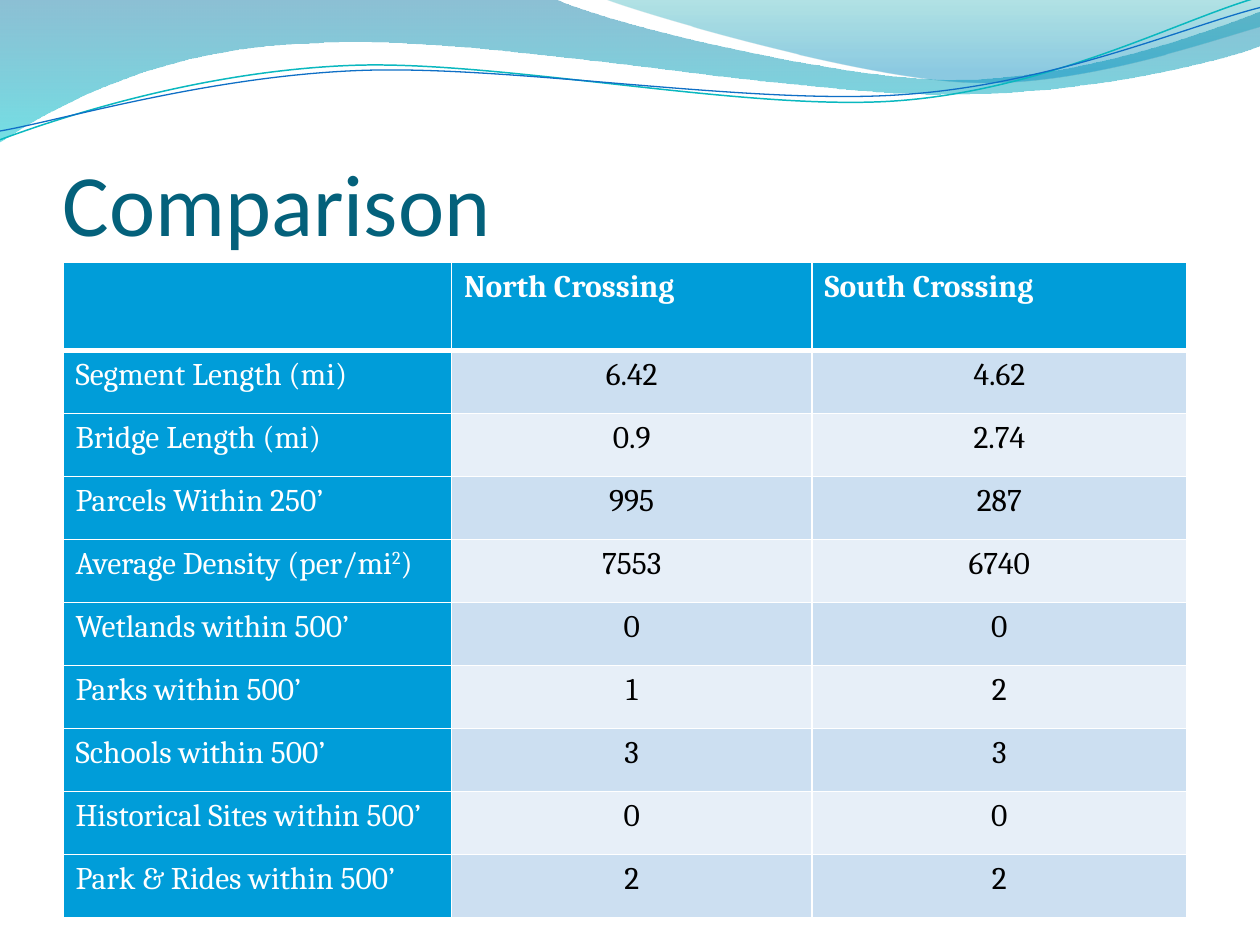
from lxml import etree
from pptx import Presentation
from pptx.dml.color import RGBColor
from pptx.enum.text import MSO_ANCHOR, PP_ALIGN
from pptx.oxml.ns import qn
from pptx.util import Pt

LEFT, CENTER = PP_ALIGN.LEFT, PP_ALIGN.CENTER
BOTTOM = MSO_ANCHOR.BOTTOM
WHITE, BLACK, HEADER_BLUE = "FFFFFF", "000000", "009DD9"
BANDS = ("CCDFF1", "E7EFF8")
LINE_ROTATION = -2.7

# Each outline is a start point, then segments: one point is a line, three a Bezier curve.
BROAD_WAVE = [
    (0, 0),
    [(316.8, -0.7)],
    [(342.7, 12.2), (478.1, 45.4), (545.8, 45.4)],
    [(614.2, 45.4), (689.8, 18.7), (720, 6.5)],
    [(720.7, 25.9)],
    [(707.8, 31.7), (626.4, 54.7), (537.1, 54)],
    [(447.8, 54), (275, 20.2), (185, 24.5)],
    [(92.9, 25.9), (33.1, 59.8), (-0.7, 81.4)],
]
RIGHT_WAVE = [
    (344.9, -0.7),
    [(366.5, 7.9), (491, 44.6), (553.7, 46.8)],
    [(616.3, 49.7), (691.9, 23), (720, 15.1)],
    [(720, 0)],
]
TEAL_LINE = [
    (-1.4, 62.9),
    [(33.8, 51.7), (114.1, 29.4), (199.8, 29.9)],
    [(284.8, 30.3), (425.9, 67.3), (512.5, 64.8)],
    [(599.1, 62.4), (676.5, 25.7), (720.2, 15.6)],
]
BLUE_LINE = [
    (-1.1, 57.9),
    [(32.9, 53.7), (118.3, 32.5), (204.1, 33)],
    [(290.5, 33.4), (428.9, 63.8), (515.5, 61.4)],
    [(601.4, 59.6), (678.4, 30.1), (721.4, 21.3)],
]

# Text between carets is superscript.
COMPARISON = [
    ("", "North Crossing", "South Crossing"),
    ("Segment Length (mi)", "6.42", "4.62"),
    ("Bridge Length (mi)", "0.9", "2.74"),
    ("Parcels Within 250’", "995", "287"),
    ("Average Density (per/mi^2^)", "7553", "6740"),
    ("Wetlands within 500’", "0", "0"),
    ("Parks within 500’", "1", "2"),
    ("Schools within 500’", "3", "3"),
    ("Historical Sites within 500’", "0", "0"),
    ("Park & Rides within 500’", "2", "2"),
]


def color(hex_string):
    return RGBColor.from_string(hex_string)


def add_run(paragraph, text, font_name, size, hex_string, bold=False):
    run = paragraph.add_run()
    run.text = text
    run.font.name = font_name
    run.font.size = Pt(size)
    run.font.bold = bold
    run.font.color.rgb = color(hex_string)
    return run


def merge_curves(shape, segments):
    """Join each three straight steps that stand for a curve into one Bezier segment."""
    steps = iter(list(shape._element.spPr.iter(qn("a:lnTo"))))
    for segment in segments:
        first, *others = [next(steps) for _ in segment]
        if others:
            first.tag = qn("a:cubicBezTo")
            for step in others:
                first.append(step[0])
                step.getparent().remove(step)


def add_outline(slide, left, top, outline, close):
    start, *segments = outline
    points = [start] + [point for segment in segments for point in segment]
    points = [(Pt(left + x), Pt(top + y)) for x, y in points]
    builder = slide.shapes.build_freeform(*points[0], scale=1.0)
    builder.add_line_segments(points[1:], close=close)
    shape = builder.convert_to_shape()
    merge_curves(shape, segments)
    shape.shadow.inherit = False
    return shape


def add_wave(slide, left, top, outline, stops):
    """Fill a wave from top to bottom; stops hold position, colour and opacity percent."""
    shape = add_outline(slide, left, top, outline, close=True)
    shape.line.fill.background()
    shape.fill.gradient()
    shape.fill.gradient_angle = 270
    for stop, (position, hex_string, _) in zip(shape.fill.gradient_stops, stops):
        stop.position = position
        stop.color.rgb = color(hex_string)
    elements = list(shape._element.spPr.iter(qn("a:srgbClr")))
    for element, (_, _, opacity) in zip(elements, stops):
        etree.SubElement(element, qn("a:alpha")).set("val", str(opacity * 1000))


def add_wave_line(slide, left, top, outline, hex_string, width):
    shape = add_outline(slide, left, top, outline, close=False)
    shape.rotation = LINE_ROTATION
    shape.fill.background()
    shape.line.color.rgb = color(hex_string)
    shape.line.width = Pt(width)


def add_wave_banner(slide, left, top):
    add_wave(slide, left, top, BROAD_WAVE, [(0, "0074A1", 45), (1, "00C6CF", 55)])
    add_wave(slide, left, top, RIGHT_WAVE, [(0, "00A1A9", 30), (0.8, "008BBF", 45)])
    add_wave_line(slide, left, top, TEAL_LINE, "0AB8BF", 0.85)
    add_wave_line(slide, left, top, BLUE_LINE, "0F6FC6", 0.75)


def add_title(slide, left, top, width, height):
    box = slide.shapes.add_textbox(Pt(left), Pt(top), Pt(width), Pt(height))
    frame = box.text_frame
    frame.word_wrap = True
    frame.vertical_anchor = BOTTOM
    frame.margin_left = frame.margin_right = frame.margin_bottom = 0
    frame.margin_top = Pt(3.6)
    add_run(frame.paragraphs[0], "Comparison", "Calibri", 50, "04617B")


def set_borders(cell, top, bottom):
    """Draw white borders, 1 point wide at the sides; they must precede the cell's fill."""
    properties = cell._tc.get_or_add_tcPr()
    for side, width in (("L", 1), ("R", 1), ("T", top), ("B", bottom)):
        line = etree.SubElement(properties, qn(f"a:ln{side}"), w=str(Pt(width)))
        fill = etree.SubElement(line, qn("a:solidFill"))
        etree.SubElement(fill, qn("a:srgbClr"), val=WHITE)


def fill_cell(cell, text, row, column):
    is_header, is_label = row == 0, column == 0
    set_borders(cell, top=3 if row == 1 else 1, bottom=3 if is_header else 1)
    on_blue = is_header or is_label
    cell.fill.solid()
    cell.fill.fore_color.rgb = color(HEADER_BLUE if on_blue else BANDS[(row - 1) % 2])
    paragraph = cell.text_frame.paragraphs[0]
    paragraph.alignment = LEFT if on_blue else CENTER
    for index, part in enumerate(text.split("^")):
        if not part:
            continue
        run = add_run(paragraph, part, "Cambria", 18, WHITE if on_blue else BLACK, is_header)
        if index % 2:
            run._r.get_or_add_rPr().set("baseline", "30000")


def add_comparison_table(slide, left, top, column_widths, header_height, row_height):
    height = header_height + row_height * (len(COMPARISON) - 1)
    table = slide.shapes.add_table(
        len(COMPARISON), len(column_widths),
        Pt(left), Pt(top), Pt(sum(column_widths)), Pt(height)).table
    for column, width in zip(table.columns, column_widths):
        column.width = Pt(width)
    for row, texts in enumerate(COMPARISON):
        table.rows[row].height = Pt(row_height if row else header_height)
        for column, text in enumerate(texts):
            fill_cell(table.cell(row, column), text, row, column)


def main():
    presentation = Presentation()
    presentation.slide_width, presentation.slide_height = Pt(720), Pt(540)
    slide = presentation.slides.add_slide(presentation.slide_layouts[6])
    add_wave_banner(slide, 0, 0)
    add_title(slide, 36, 55.2, 648, 90)
    add_comparison_table(slide, 36, 150, (222, 206, 214.2), 50.4, 36)
    presentation.save("out.pptx")


if __name__ == "__main__":
    main()
